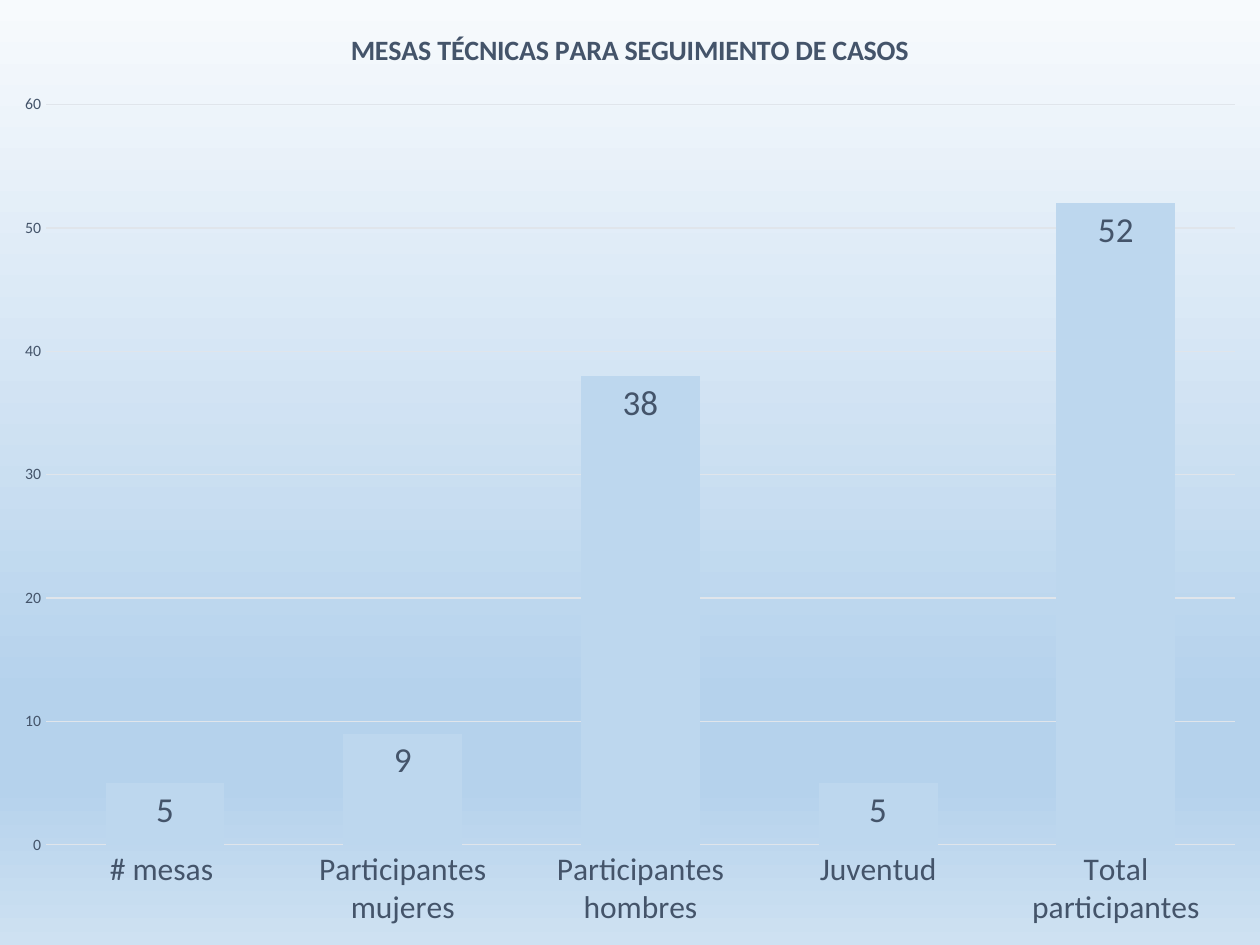
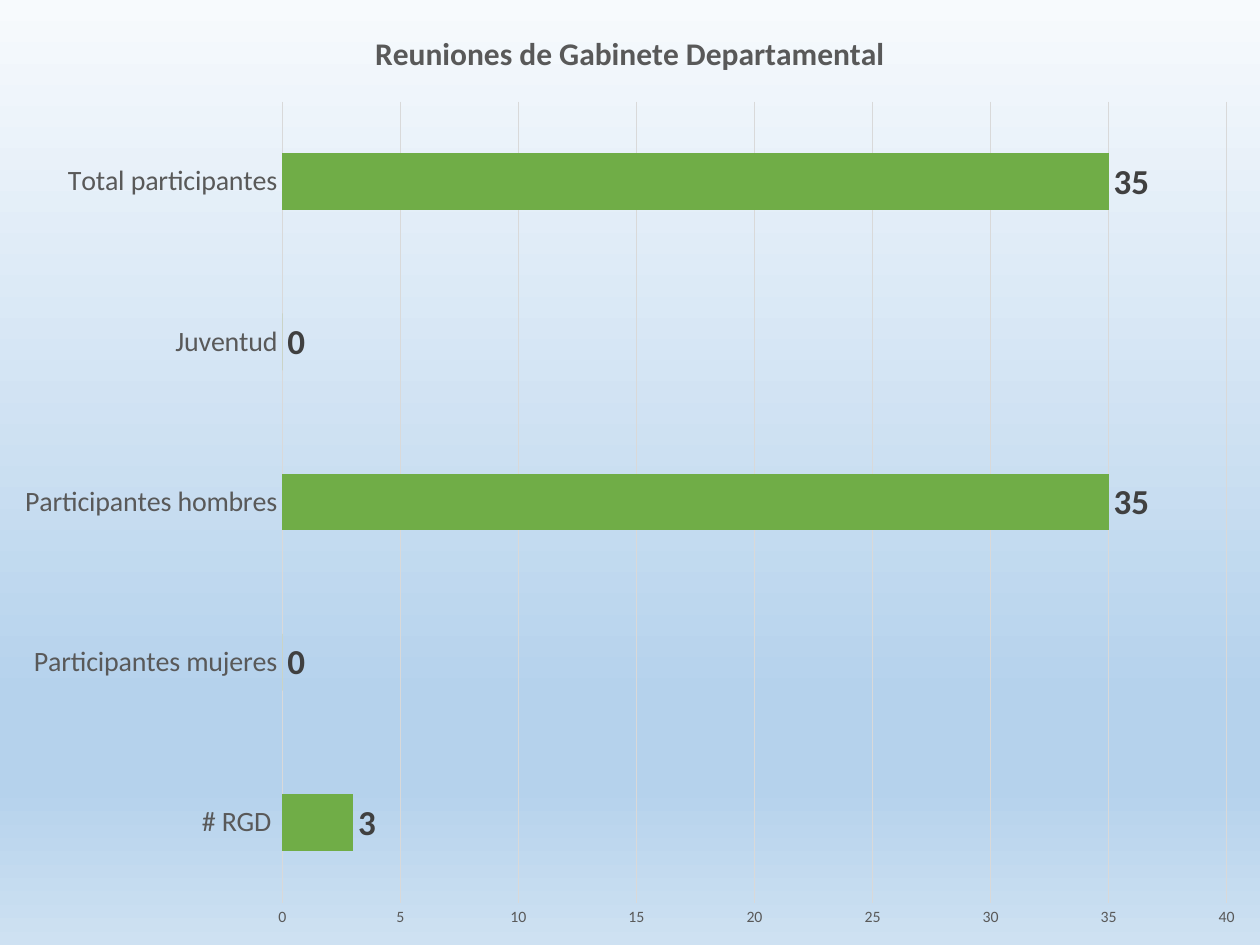
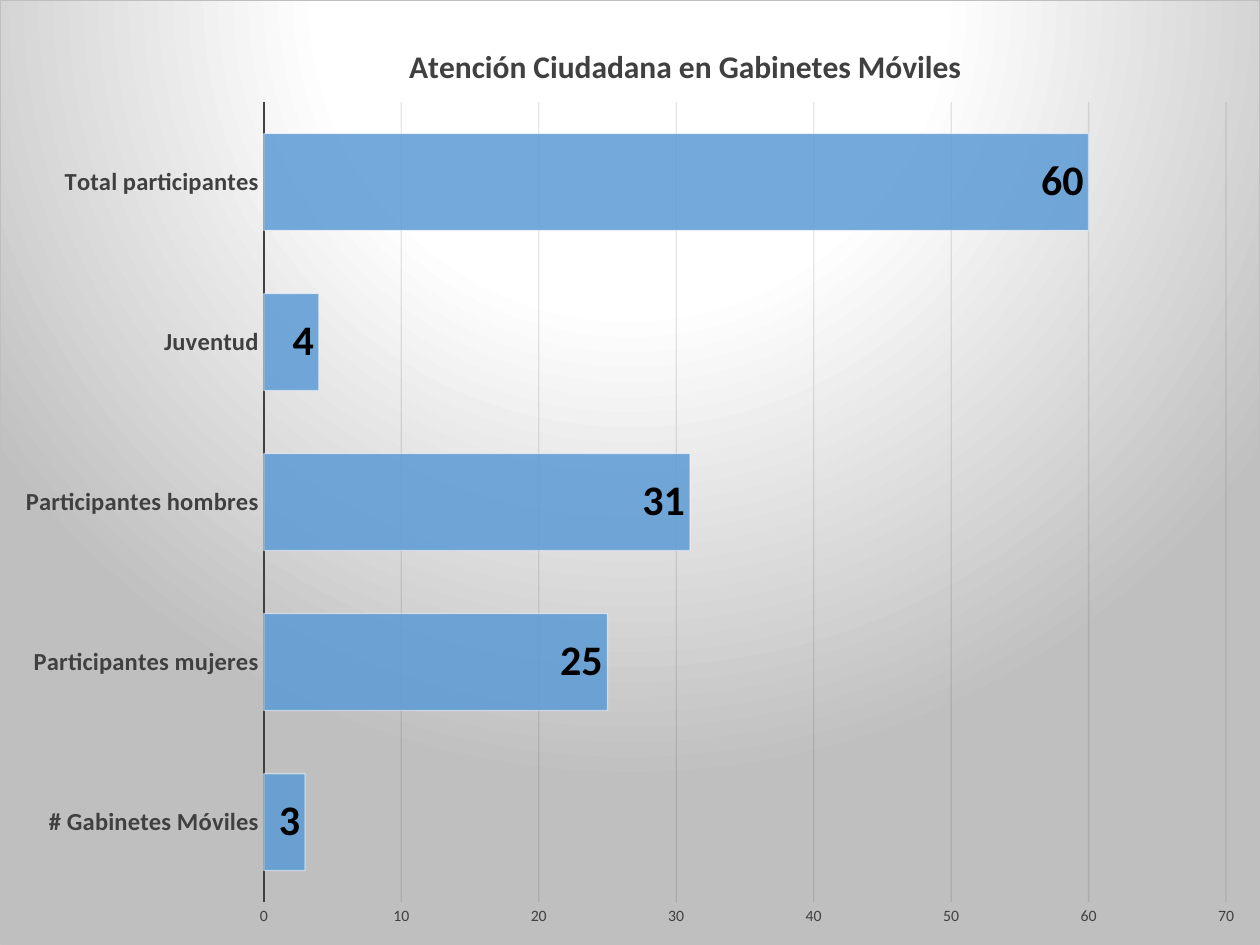
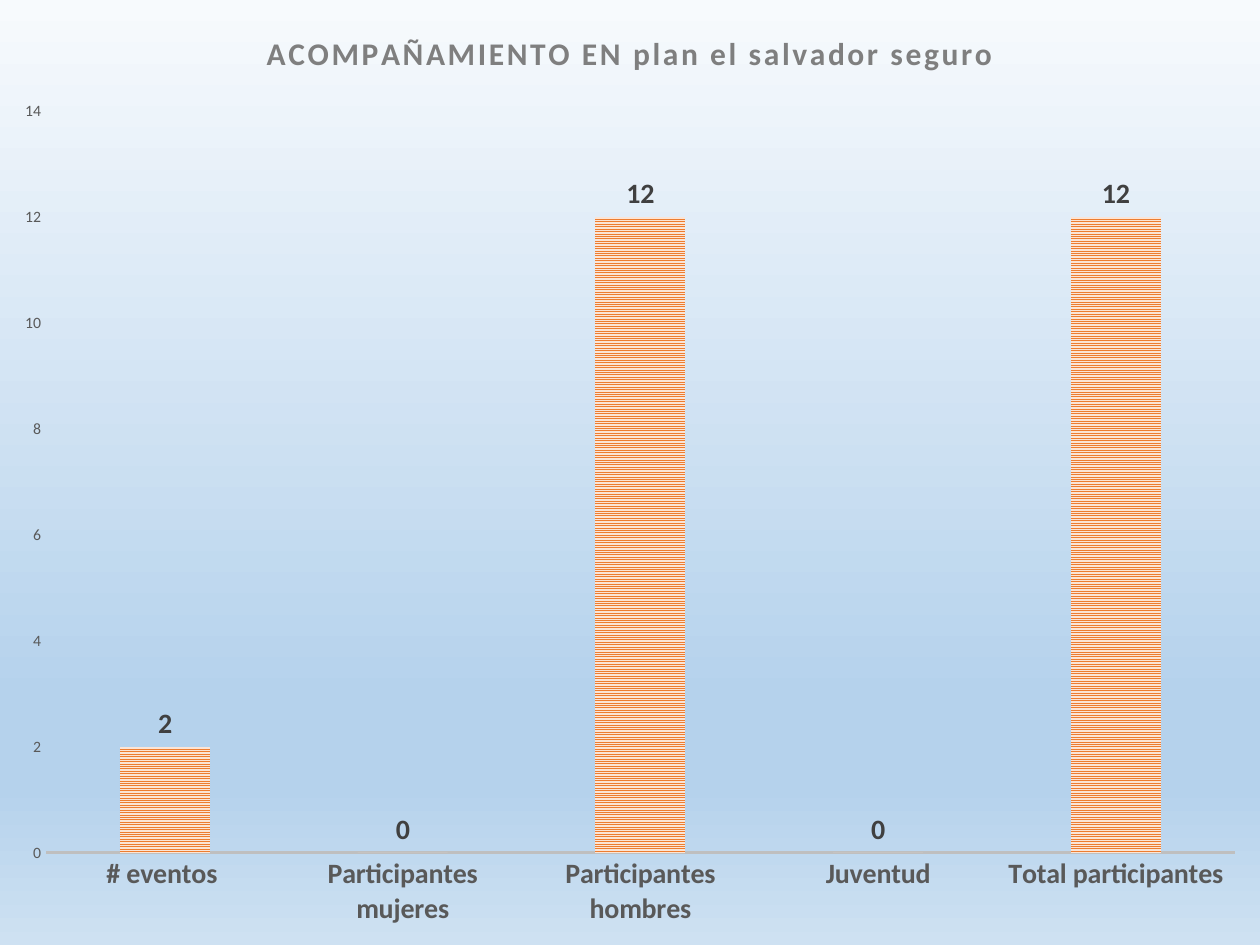
from dataclasses import dataclass
from typing import Optional

from lxml import etree
from pptx import Presentation
from pptx.chart.data import CategoryChartData
from pptx.dml.color import RGBColor
from pptx.enum.chart import XL_CHART_TYPE, XL_LABEL_POSITION, XL_TICK_MARK
from pptx.enum.dml import MSO_PATTERN
from pptx.oxml import parse_xml
from pptx.oxml.ns import nsdecls, qn
from pptx.util import Pt

COLUMNS = XL_CHART_TYPE.COLUMN_CLUSTERED
BARS = XL_CHART_TYPE.BAR_CLUSTERED
INSIDE_END = XL_LABEL_POSITION.INSIDE_END
OUTSIDE_END = XL_LABEL_POSITION.OUTSIDE_END
NO_TICK = XL_TICK_MARK.NONE
NARROW_HORIZONTAL = MSO_PATTERN.NARROW_HORIZONTAL

# Shared measures, font and colours
SLIDE_WIDTH, SLIDE_HEIGHT = Pt(720), Pt(540)
FONT = "Calibri"
BLANK_LAYOUT = 6
BLACK = RGBColor(0x00, 0x00, 0x00)
NEAR_BLACK = RGBColor(0x0D, 0x0D, 0x0D)
CHARCOAL = RGBColor(0x40, 0x40, 0x40)
GRAY = RGBColor(0x59, 0x59, 0x59)
MID_GRAY = RGBColor(0x7F, 0x7F, 0x7F)
SILVER = RGBColor(0xBF, 0xBF, 0xBF)
LIGHT_GRAY = RGBColor(0xD9, 0xD9, 0xD9)
WHITE = RGBColor(0xFF, 0xFF, 0xFF)
SLATE = RGBColor(0x44, 0x54, 0x6A)
PALE_SLATE = RGBColor(0xE0, 0xE5, 0xEB)
PALE_BLUE = RGBColor(0xBD, 0xD7, 0xEE)
BLUE = RGBColor(0x5B, 0x9B, 0xD5)
GREEN = RGBColor(0x70, 0xAD, 0x47)
ORANGE = RGBColor(0xED, 0x7D, 0x31)
PEACH = RGBColor(0xFB, 0xE5, 0xD6)
SKY_TOP = RGBColor(0xF7, 0xFA, 0xFD)
SKY_DEEP = RGBColor(0xB5, 0xD2, 0xEC)
SKY_BOTTOM = RGBColor(0xCE, 0xE1, 0xF2)

SKY_STOPS = [(0, SKY_TOP), (74, SKY_DEEP), (83, SKY_DEEP), (100, SKY_BOTTOM)]
SPOTLIGHT_STOPS = [(0, WHITE), (39, WHITE), (100, SILVER)]
DOWNWARD = '<a:lin ang="5400000" scaled="0"/>'
SPOTLIGHT = ('<a:path path="circle"><a:fillToRect l="50000" t="-80000" '
             'r="50000" b="180000"/></a:path>')

PARTICIPANTS = ["Participantes mujeres", "Participantes hombres",
                "Juventud", "Total participantes"]


@dataclass
class ChartStyle:
    kind: int
    gap: int
    text_color: RGBColor
    title_color: RGBColor
    category_size: int
    label_size: int
    label_color: RGBColor
    bar_color: RGBColor
    axis_line: tuple
    grid_color: Optional[RGBColor] = None
    title_size: int = 18
    category_bold: bool = False
    label_bold: bool = True
    label_position: int = OUTSIDE_END
    overlap: int = 0


def gradient_xml(stops, direction):
    stop_xml = "".join(
        f'<a:gs pos="{position * 1000}"><a:srgbClr val="{color}"/></a:gs>'
        for position, color in stops)
    return (f'<a:gradFill {nsdecls("a")} rotWithShape="1">'
            f'<a:gsLst>{stop_xml}</a:gsLst>{direction}</a:gradFill>')


def set_background(master):
    master.background.fill.solid()
    properties = master.element.xpath(".//p:bgPr")[0]
    properties.replace(properties[0], parse_xml(gradient_xml(SKY_STOPS, DOWNWARD)))


def set_font(font, size, color, bold=False):
    font.name, font.size, font.bold = FONT, Pt(size), bold
    font.color.rgb = color


def set_line(line, color, width=0.75):
    line.color.rgb = color
    line.width = Pt(width)


def set_opacity(chart, xpath, percent):
    for color in chart.element.xpath(xpath):
        etree.SubElement(color, qn("a:alpha")).set("val", str(percent * 1000))


def set_areas(chart, fill="<a:noFill/>", line="<a:noFill/>"):
    """Fill the chart area and leave the plot area clear."""
    def area(fill_xml, line_xml):
        return parse_xml(f'<c:spPr {nsdecls("c", "a")}>{fill_xml}'
                         f'<a:ln w="{Pt(0.75)}">{line_xml}</a:ln></c:spPr>')

    for old_area in chart.element.xpath("./c:spPr"):
        chart.element.remove(old_area)
    chart.element.xpath("./c:chart")[0].addnext(area(fill, line))
    chart.element.xpath(".//c:plotArea")[0].append(area("<a:noFill/>", "<a:noFill/>"))


def place_title(chart, x, y):
    layout = chart.element.xpath("./c:chart/c:title/c:layout")[0]
    manual = etree.SubElement(layout, qn("c:manualLayout"))
    for name, value in (("xMode", "edge"), ("yMode", "edge"), ("x", x), ("y", y)):
        etree.SubElement(manual, qn(f"c:{name}")).set("val", str(value))


def add_title(chart, text, style):
    chart.has_title = True
    run = chart.chart_title.text_frame.paragraphs[0].add_run()
    run.text = text
    set_font(run.font, style.title_size, style.title_color, bold=True)
    chart.chart_title.include_in_layout = False


def format_axes(chart, style):
    category_axis, value_axis = chart.category_axis, chart.value_axis
    for axis in (category_axis, value_axis):
        axis.major_tick_mark = axis.minor_tick_mark = NO_TICK
    set_font(category_axis.tick_labels.font, style.category_size,
             style.text_color, style.category_bold)
    set_line(category_axis.format.line, *style.axis_line)
    set_font(value_axis.tick_labels.font, 9, style.text_color)
    value_axis.format.line.fill.background()
    value_axis.has_major_gridlines = style.grid_color is not None
    if style.grid_color is not None:
        set_line(value_axis.major_gridlines.format.line, style.grid_color)


def format_bars(plot, style):
    plot.vary_by_categories = False
    plot.gap_width, plot.overlap = style.gap, style.overlap
    fill = plot.series[0].format.fill
    fill.solid()
    fill.fore_color.rgb = style.bar_color
    plot.has_data_labels = True
    labels = plot.data_labels
    labels.show_value = True
    labels.position = style.label_position
    set_font(labels.font, style.label_size, style.label_color, style.label_bold)


def add_chart_slide(presentation, title, first_category, values, style):
    """Add a slide filled by one chart and return the chart."""
    slide = presentation.slides.add_slide(presentation.slide_layouts[BLANK_LAYOUT])
    data = CategoryChartData()
    data.categories = [first_category] + PARTICIPANTS
    data.add_series("Series 1", values)
    chart = slide.shapes.add_chart(
        style.kind, 0, 0, SLIDE_WIDTH, SLIDE_HEIGHT, data).chart
    set_font(chart.font, 10, BLACK)
    chart.has_legend = False
    add_title(chart, title, style)
    format_axes(chart, style)
    format_bars(chart.plots[0], style)
    set_areas(chart)
    return chart


def add_case_tables(presentation):
    add_chart_slide(
        presentation, "MESAS TÉCNICAS PARA SEGUIMIENTO DE CASOS",
        "# mesas ", [5, 9, 38, 5, 52],
        ChartStyle(COLUMNS, gap=100, overlap=-24, text_color=SLATE,
                   title_color=SLATE, title_size=16, category_size=18,
                   label_size=20, label_color=SLATE, label_bold=False,
                   label_position=INSIDE_END, bar_color=PALE_BLUE,
                   axis_line=(PALE_SLATE, 0.75), grid_color=PALE_SLATE))


def add_cabinet_meetings(presentation):
    add_chart_slide(
        presentation, "Reuniones de Gabinete Departamental",
        "# RGD ", [3, 0, 35, 0, 35],
        ChartStyle(BARS, gap=182, text_color=GRAY, title_color=GRAY,
                   category_size=16, label_size=20, label_color=CHARCOAL,
                   bar_color=GREEN, axis_line=(LIGHT_GRAY, 0.75),
                   grid_color=LIGHT_GRAY))


def add_mobile_cabinets(presentation):
    chart = add_chart_slide(
        presentation, "Atención Ciudadana en Gabinetes Móviles",
        "# Gabinetes Móviles", [3, 25, 31, 4, 60],
        ChartStyle(BARS, gap=65, text_color=CHARCOAL, title_color=CHARCOAL,
                   category_size=14, category_bold=True, label_size=24,
                   label_color=BLACK, label_position=INSIDE_END, bar_color=BLUE,
                   axis_line=(CHARCOAL, 1.5), grid_color=NEAR_BLACK))
    place_title(chart, 0.32, 0.04)
    set_line(chart.plots[0].series[0].format.line, WHITE)
    set_opacity(chart, ".//c:ser/c:spPr/a:solidFill/a:srgbClr", 85)
    set_opacity(chart, ".//c:ser/c:spPr/a:ln//a:srgbClr", 50)
    set_opacity(chart, ".//c:majorGridlines//a:srgbClr", 10)
    set_areas(chart, gradient_xml(SPOTLIGHT_STOPS, SPOTLIGHT),
              f'<a:solidFill><a:srgbClr val="{SILVER}"/></a:solidFill>')


def add_security_plan(presentation):
    chart = add_chart_slide(
        presentation, "ACOMPAÑAMIENTO EN plan el salvador seguro",
        "# eventos ", [2, 0, 12, 0, 12],
        ChartStyle(COLUMNS, gap=164, overlap=-22, text_color=GRAY,
                   title_color=MID_GRAY, category_size=16, category_bold=True,
                   label_size=16, label_color=CHARCOAL, bar_color=ORANGE,
                   axis_line=(SILVER, 1.5)))
    # Letter spacing in hundredths of a point
    chart.element.xpath("./c:chart/c:title//a:r/a:rPr")[0].set("spc", "150")
    fill = chart.plots[0].series[0].format.fill
    fill.patterned()
    fill.pattern = NARROW_HORIZONTAL
    fill.fore_color.rgb = ORANGE
    fill.back_color.rgb = PEACH


def main():
    presentation = Presentation()
    presentation.slide_width, presentation.slide_height = SLIDE_WIDTH, SLIDE_HEIGHT
    set_background(presentation.slide_master)
    add_case_tables(presentation)
    add_cabinet_meetings(presentation)
    add_mobile_cabinets(presentation)
    add_security_plan(presentation)
    presentation.save("out.pptx")


if __name__ == "__main__":
    main()
